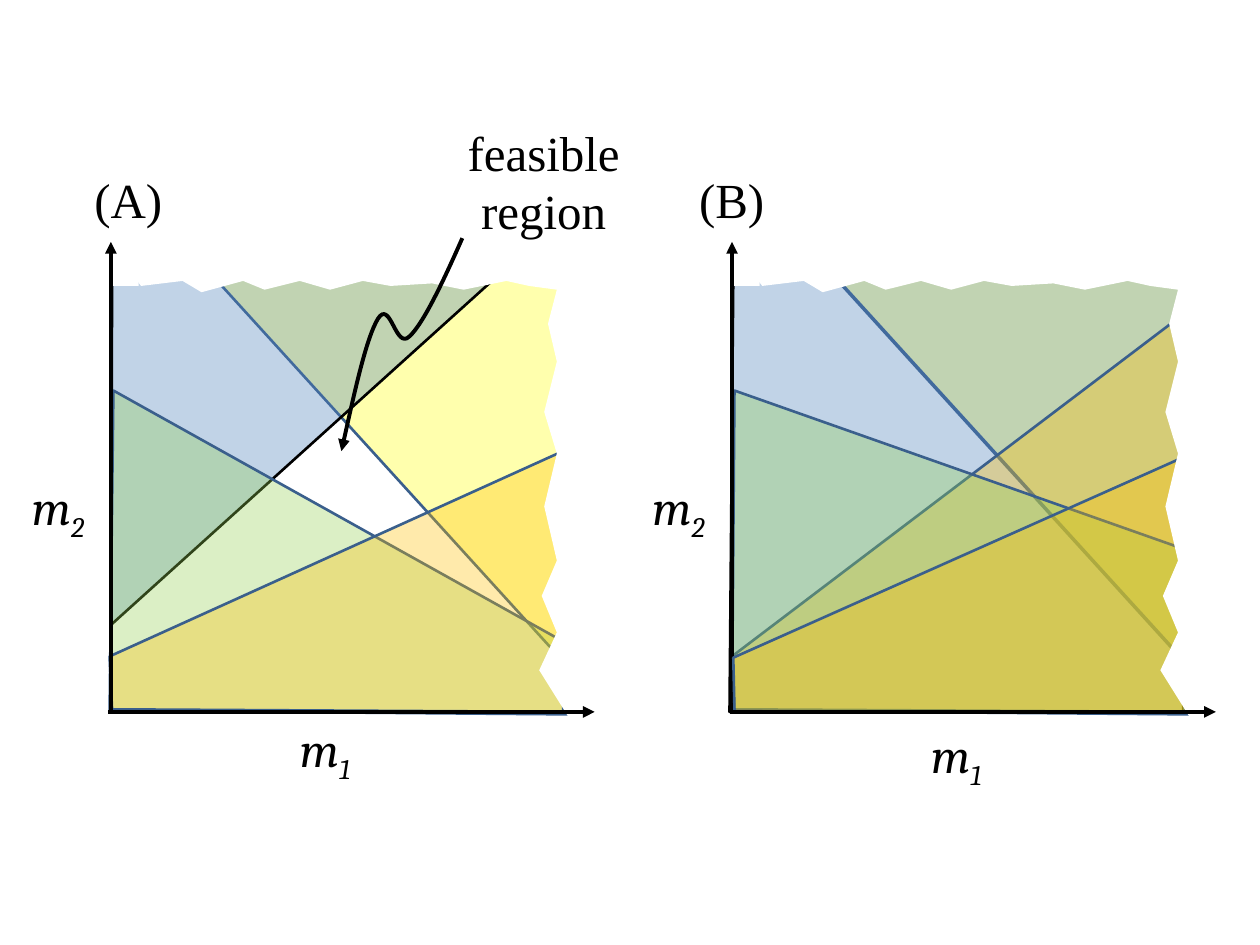
from dataclasses import dataclass

from lxml import etree
from pptx import Presentation
from pptx import util as u
from pptx.dml.color import RGBColor
from pptx.enum import shapes, text
from pptx.oxml.ns import qn

Point = tuple[float, float]


@dataclass(frozen=True)
class Theme:
    ink: str = "000000"
    paper: str = "FFFFFF"
    edge: str = "3A5F8C"
    yellow: str = "FFFF00"
    blue: str = "4F81BD"
    green: str = "92D050"
    orange: str = "FFC000"
    label_size: int = 28
    label_font: str = "Times New Roman"
    math_font: str = "Cambria"
    axis_width: float = 2.25


THEME = Theme()


@dataclass(frozen=True)
class Constraint:
    """Half-plane that one inequality rules out."""
    color: str
    opacity: int
    points: list[Point]
    edge: str = THEME.edge
    width: float = 1.5


@dataclass(frozen=True)
class Panel:
    name: str
    left: float
    constraints: list[Constraint]
    over_axis: list[Constraint]
    m1_at: Point
    m2_width: float


# Ragged upper and right border, relative to the panel's left
TORN_EDGE = [
    (0.98, 2.08), (1.12, 2.27), (1.45, 2.23), (1.6, 2.32), (1.93, 2.23), (2.1, 2.3),
    (2.38, 2.23), (2.62, 2.3), (2.88, 2.23), (3.1, 2.27), (3.43, 2.25), (3.68, 2.3),
    (4.02, 2.23), (4.2, 2.27), (4.42, 2.3), (4.35, 2.57), (4.42, 2.87), (4.32, 3.27),
    (4.42, 3.6), (4.32, 4.02), (4.42, 4.45), (4.3, 4.73), (4.42, 5.02), (4.28, 5.32),
    (4.63, 5.88), (4.65, 2.08),
]
AXIS_TOP, AXIS_BOTTOM = 1.92, 5.65
PANEL_STEP = 4.93


def steep(width: float, left: float = 0) -> Constraint:
    """The yellow constraint that both panels share."""
    points = [(1.68, 2.18), (4.48, 5.26), (4.48, 2.2), (2.22, 2.2)]
    return Constraint(THEME.yellow, 32, shifted(points, left), width=width)


def shifted(points: list[Point], left: float) -> list[Point]:
    return [(x + left, y) for x, y in points]


def outline(slide, points: list[Point], close: bool = True):
    (x, y), *rest = [(u.Inches(px), u.Inches(py)) for px, py in points]
    builder = slide.shapes.build_freeform(x, y)
    builder.add_line_segments(rest, close=close)
    shape = builder.convert_to_shape()
    shape.shadow.inherit = False
    return shape


def set_line(shape, color: str, width: float, arrow_end: str | None = None) -> None:
    shape.line.color.rgb = RGBColor.from_string(color)
    shape.line.width = u.Pt(width)
    if arrow_end:
        ln = shape.element.spPr.find(qn("a:ln"))
        etree.SubElement(ln, qn(f"a:{arrow_end}"), type="triangle")


def set_fill(shape, color: str, opacity: int = 100) -> None:
    shape.fill.solid()
    shape.fill.fore_color.rgb = RGBColor.from_string(color)
    if opacity < 100:
        rgb = shape.element.spPr.find(qn("a:solidFill"))[0]
        etree.SubElement(rgb, qn("a:alpha"), val=str(opacity * 1000))


def draw_constraint(slide, constraint: Constraint) -> None:
    region = outline(slide, constraint.points)
    set_fill(region, constraint.color, constraint.opacity)
    set_line(region, constraint.edge, constraint.width)


def draw_axis(slide, start: Point, end: Point) -> None:
    axis = slide.shapes.add_connector(
        shapes.MSO_CONNECTOR.STRAIGHT, *(u.Inches(v) for v in (*start, *end)))
    set_line(axis, THEME.ink, THEME.axis_width, "tailEnd")
    etree.SubElement(axis.element.spPr, qn("a:effectLst"))


def add_label(slide, words: str, at: Point, size: Point, *, font: str = THEME.label_font,
              italic: bool = False, centered: bool = True, subscript: str = "") -> None:
    frame = slide.shapes.add_textbox(*(u.Inches(v) for v in (*at, *size))).text_frame
    frame.word_wrap = True
    frame.auto_size = text.MSO_AUTO_SIZE.SHAPE_TO_FIT_TEXT
    paragraph = frame.paragraphs[0]
    paragraph.alignment = text.PP_ALIGN.CENTER if centered else text.PP_ALIGN.LEFT
    for part in filter(None, (words, subscript)):
        run = paragraph.add_run()
        run.text = part
        run.font.name = font
        run.font.size = u.Pt(THEME.label_size)
        run.font.italic = italic
        run.font.color.rgb = RGBColor.from_string(THEME.ink)
    if subscript:
        run.font.element.set("baseline", "-25000") if hasattr(run.font, "element") \
            else run._r.get_or_add_rPr().set("baseline", "-25000")


def draw_panel(slide, panel: Panel) -> None:
    for constraint in panel.constraints:
        draw_constraint(slide, constraint)

    # White strip that trims the upper left corner
    trim = slide.shapes.add_shape(
        shapes.MSO_SHAPE.RECTANGLE, u.Inches(0.65 + panel.left), u.Inches(2.12),
        u.Inches(0.45), u.Inches(0.15))
    trim.shadow.inherit = False
    set_fill(trim, THEME.paper)
    trim.line.fill.background()

    # Axes and torn border
    x = 0.88 + panel.left
    draw_axis(slide, (x, AXIS_BOTTOM), (x, AXIS_TOP))
    for constraint in panel.over_axis:
        draw_constraint(slide, constraint)
    torn = outline(slide, shifted(TORN_EDGE, panel.left))
    set_fill(torn, THEME.paper)
    torn.line.fill.background()
    draw_axis(slide, (x - 0.02, AXIS_BOTTOM), (x + 3.84, AXIS_BOTTOM))

    # Panel and axis labels
    add_label(slide, panel.name, (0.65 + 4.8 * (panel.left > 0), 1.3), (1.07, 0.57),
              centered=False)
    variable = dict(font=THEME.math_font, italic=True)
    add_label(slide, "m", panel.m1_at, (3.6, 0.57), subscript="1", **variable)
    add_label(slide, "m", (max(panel.left - 0.01, 0), 3.73), (panel.m2_width, 0.57),
              subscript="2", **variable)


def draw_callout(slide) -> None:
    """Curved arrow from the caption into the feasible region."""
    curve = outline(slide, [
        (2.71, 3.58), (2.81, 3.13), (2.91, 2.68), (3, 2.53), (3.1, 2.37), (3.14, 2.78),
        (3.25, 2.67), (3.36, 2.57), (3.52, 2.23), (3.67, 1.89)], close=False)
    curve.fill.background()
    set_line(curve, THEME.ink, THEME.axis_width, "headEnd")
    # Every three segments become the control points of one Bézier curve
    path = next(curve.element.iter(qn("a:path")))
    segments = path.findall(qn("a:lnTo"))
    for i in range(0, len(segments), 3):
        bezier = etree.SubElement(path, qn("a:cubicBezTo"))
        for segment in segments[i:i + 3]:
            bezier.append(segment[0])
            path.remove(segment)
    add_label(slide, "feasible region", (3.58, 0.92), (1.47, 1.04))


PANELS = [
    Panel("(A)", 0, [
        steep(1.5),
        Constraint(THEME.blue, 35, [(0.88, 4.96), (3.96, 2.18), (1.96, 2.18), (0.89, 2.21)],
                   edge=THEME.ink),
        Constraint(THEME.green, 33, [(0.9, 3.1), (4.52, 5.12), (4.52, 5.67), (0.87, 5.64)]),
        Constraint(THEME.orange, 33,
                   [(0.87, 5.21), (4.47, 3.58), (4.47, 5.65), (0.89, 5.63)]),
    ], [], m1_at=(0.78, 5.65), m2_width=0.92),
    Panel("(B)", PANEL_STEP, [
        steep(2, PANEL_STEP),
        Constraint(THEME.blue, 35,
                   [(5.79, 5.65), (9.39, 5.65), (9.39, 2.18), (6.9, 2.18), (5.82, 2.21)],
                   edge=THEME.ink),
        Constraint(THEME.orange, 33, [(5.81, 5.21), (9.45, 2.45), (9.4, 5.65), (5.83, 5.63)]),
        Constraint(THEME.green, 33, [(5.83, 3.1), (9.43, 4.37), (9.45, 5.67), (5.81, 5.64)]),
    ], [
        Constraint(THEME.orange, 33, [(5.82, 5.22), (9.39, 3.63), (9.42, 5.65), (5.83, 5.65)]),
    ], m1_at=(5.79, 5.7), m2_width=0.93),
]


def main() -> None:
    deck = Presentation()
    deck.slide_width, deck.slide_height = u.Inches(10), u.Inches(7.5)
    slide = deck.slides.add_slide(deck.slide_layouts[6])
    for panel in PANELS:
        draw_panel(slide, panel)
    draw_callout(slide)
    deck.save("out.pptx")


if __name__ == "__main__":
    main()
